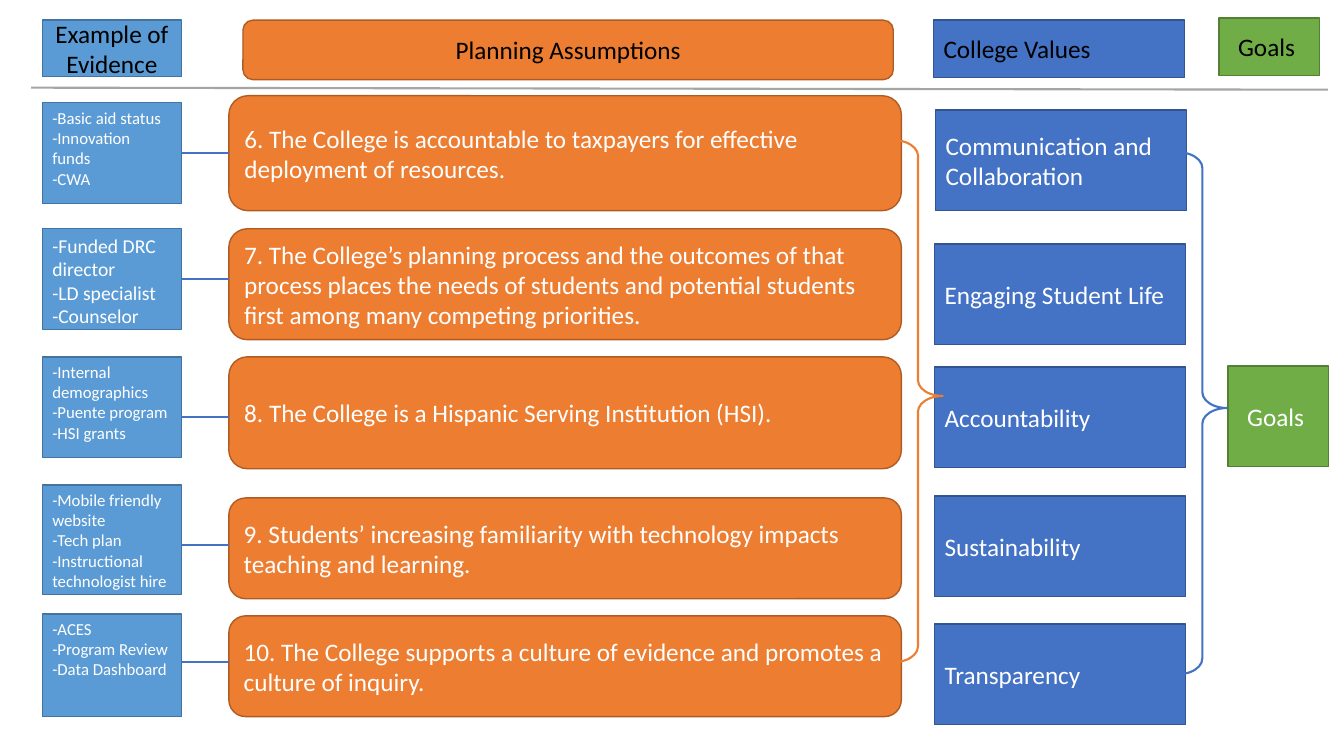
from lxml import etree
from pptx import Presentation
from pptx import util as u
from pptx.dml.color import RGBColor
from pptx.enum import shapes, text
from pptx.oxml.ns import qn

COLORS = {
    "evidence": "5B9BD5", "evidence_edge": "43739E",
    "planning": "ED7D31", "planning_edge": "AF5C24",
    "values": "4472C4", "values_edge": "325491",
    "goals": "70AD47", "goals_edge": "538035",
    "divider": "A5A5A5", "light": "FFFFFF", "dark": "000000",
}
RECT = shapes.MSO_SHAPE.RECTANGLE
ROUNDED = shapes.MSO_SHAPE.ROUNDED_RECTANGLE
TOP, MIDDLE = text.MSO_ANCHOR.TOP, text.MSO_ANCHOR.MIDDLE
LEFT, CENTER = text.PP_ALIGN.LEFT, text.PP_ALIGN.CENTER

# Headers: text, colour, box (left, top, width, height), outline, alignment
HEADERS = [
    ("Example of Evidence", "evidence", (0.42, 0.2, 1.38, 0.56), RECT, CENTER),
    ("Planning Assumptions", "planning", (2.41, 0.2, 6.45, 0.59), ROUNDED, CENTER),
    ("College Values", "values", (9.26, 0.2, 2.49, 0.57), RECT, LEFT),
    ("Goals ", "goals", (12.09, 0.18, 1, 0.57), RECT, CENTER),
]
# Evidence: top, height, text size, lines
EVIDENCE = [
    (1.02, 1, 12, ["-Basic aid status", "-Innovation funds", "-CWA"]),
    (2.27, 1, 14, ["-Funded DRC director", "-LD specialist", "-Counselor"]),
    (3.54, 1, 12, ["-Internal demographics", "-Puente program", "-HSI grants"]),
    (4.81, 1.09, 12, ["-Mobile friendly website", "-Tech plan",
                      "-Instructional technologist hire"]),
    (6.09, 1.02, 12, ["-ACES", "-Program Review", "-Data Dashboard"]),
]
# Planning assumptions: top, height, text
ASSUMPTIONS = [
    (0.95, 1.14, "6. The College is accountable to taxpayers for effective "
                 "deployment of resources."),
    (2.27, 1.1, "7. The College’s planning process and the outcomes of that process "
                "places the needs of students and potential students first among "
                "many competing priorities."),
    (3.54, 1.11, "8. The College is a Hispanic Serving Institution (HSI)."),
    (4.94, 1, "9. Students’ increasing familiarity with technology impacts "
              "teaching and learning."),
    (6.11, 1, "10. The College supports a culture of evidence and promotes a "
              "culture of inquiry."),
]
LINK_HEIGHTS = [1.52, 2.77, 4.14, 5.41, 6.57]
# College values: left, top, text
VALUES = [
    (9.28, 1.09, "Communication and Collaboration"),
    (9.27, 2.42, "Engaging Student Life"),
    (9.27, 3.64, "Accountability"),
    (9.27, 4.92, "Sustainability"),
    (9.27, 6.19, "Transparency"),
]
# Braces: colour, left, top
BRACES = [("planning", 8.86, 1.39), ("values", 11.68, 1.51)]

EVIDENCE_LEFT, EVIDENCE_WIDTH = 0.42, 1.38
PLANNING_LEFT, PLANNING_WIDTH = 2.27, 6.67

presentation = Presentation()
presentation.slide_width, presentation.slide_height = u.Inches(13.33), u.Inches(7.5)
slide = presentation.slides.add_slide(presentation.slide_layouts[6])


def rgb(name):
    return RGBColor.from_string(COLORS[name])


def add_box(lines, color, box, outline=RECT, align=LEFT, anchor=MIDDLE,
            size=18, text_color="light"):
    shape = slide.shapes.add_shape(outline, *map(u.Inches, box))
    shape.shadow.inherit = False
    shape.fill.solid()
    shape.fill.fore_color.rgb = rgb(color)
    shape.line.color.rgb = rgb(color + "_edge")
    shape.line.width = u.Pt(1)
    frame = shape.text_frame
    frame.word_wrap = True
    frame.vertical_anchor = anchor
    for index, line in enumerate(lines):
        paragraph = frame.add_paragraph() if index else frame.paragraphs[0]
        paragraph.alignment = align
        run = paragraph.add_run()
        run.text = line
        run.font.name = "Calibri"
        run.font.size = u.Pt(size)
        run.font.color.rgb = rgb(text_color)
    return shape


def add_line(start, end, color):
    line = slide.shapes.add_connector(
        shapes.MSO_CONNECTOR.STRAIGHT, *map(u.Inches, start + end))
    line.line.color.rgb = rgb(color)
    line.line.width = u.Pt(1.5)
    etree.SubElement(line._element.spPr, qn("a:effectLst"))
    return line


def is_middle(shape, height):
    return abs(shape.top + shape.height / 2 - u.Inches(height)) < u.Inches(0.01)


# Header row and divider
for label, color, box, outline, align in HEADERS:
    add_box([label], color, box, outline, align, text_color="dark")
add_line((0.31, 0.87), (13.17, 0.89), "divider")

# Evidence linked to planning assumptions
for (top, height, size, lines), (plan_top, plan_height, assumption), link in zip(
        EVIDENCE, ASSUMPTIONS, LINK_HEIGHTS):
    evidence = add_box(lines, "evidence", (EVIDENCE_LEFT, top, EVIDENCE_WIDTH, height),
                       anchor=TOP, size=size)
    planning = add_box([assumption], "planning",
                       (PLANNING_LEFT, plan_top, PLANNING_WIDTH, plan_height), ROUNDED)
    connector = add_line((EVIDENCE_LEFT + EVIDENCE_WIDTH, link),
                         (PLANNING_LEFT, link), "values")
    if is_middle(evidence, link):
        connector.begin_connect(evidence, 3)
    if is_middle(planning, link):
        connector.end_connect(planning, 1)

# College values and goals
for left, top, label in VALUES:
    add_box([label], "values", (left, top, 2.49, 1))
add_box(["Goals "], "goals", (12.18, 3.63, 1, 1), align=CENTER)

# Braces gathering each column
for color, left, top in BRACES:
    brace = slide.shapes.add_shape(shapes.MSO_SHAPE.RIGHT_BRACE,
                                   *map(u.Inches, (left, top, 0.49, 5.18)))
    brace.shadow.inherit = False
    brace.adjustments[0], brace.adjustments[1] = 0.32, 0.49
    brace.fill.background()
    brace.line.color.rgb = rgb(color)
    brace.line.width = u.Pt(1.5)

presentation.save("out.pptx")
